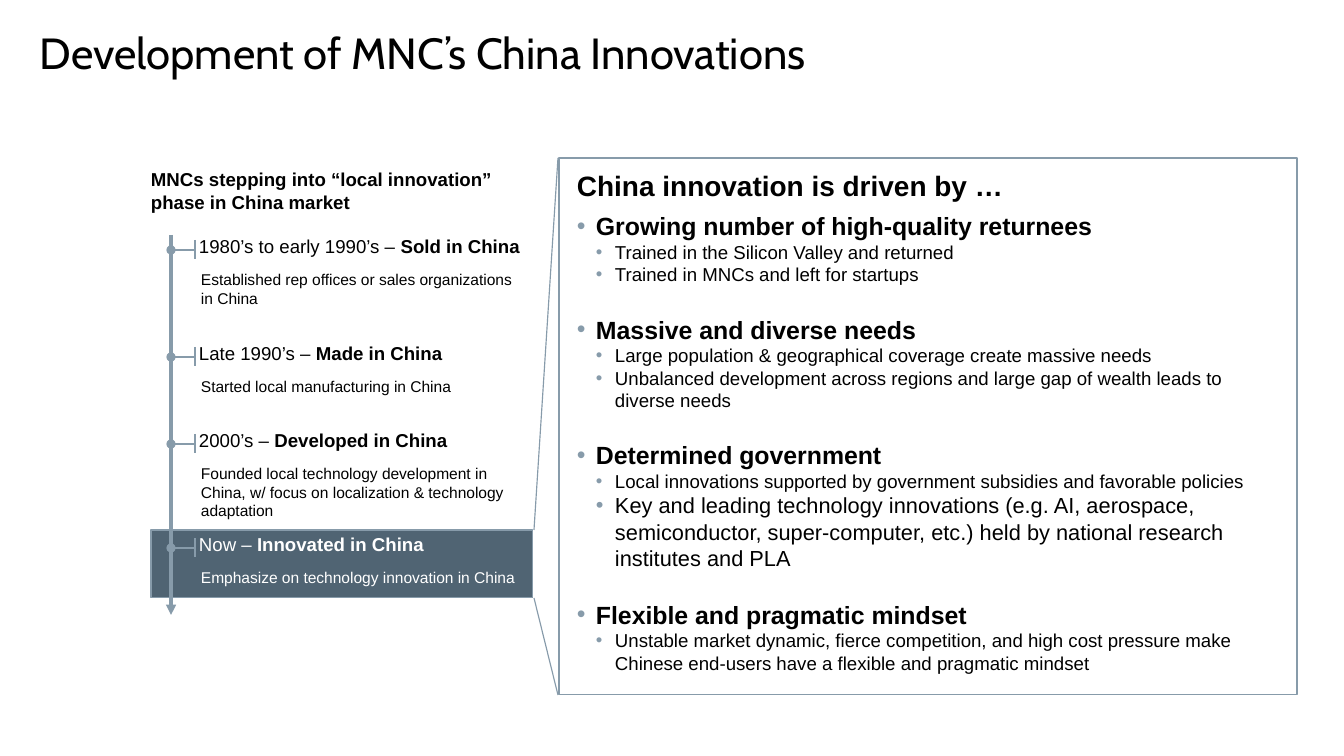
from lxml import etree
from pptx import Presentation
from pptx.dml.color import RGBColor
from pptx.enum import shapes, text
from pptx.oxml import ns
from pptx.util import Pt

BLACK = RGBColor(0x00, 0x00, 0x00)
WHITE = RGBColor(0xFF, 0xFF, 0xFF)
SLATE = RGBColor(0x50, 0x64, 0x73)
STEEL = RGBColor(0x87, 0x9B, 0xAA)

STAGES = [
    (0, "1980’s to early 1990’s – ", "Sold in China",
     "Established rep offices or sales organizations in China"),
    (107, "Late 1990’s – ", "Made in China",
     "Started local manufacturing in China"),
    (194, "2000’s – ", "Developed in China",
     "Founded local technology development in China, "
     "w/ focus on localization & technology adaptation"),
    (298, "Now – ", "Innovated in China",
     "Emphasize on technology innovation in China"),
]
DRIVERS = [
    ("Growing number of high-quality returnees", [
        ("Trained in the Silicon Valley and returned", 12),
        ("Trained in MNCs and left for startups", 12)]),
    ("Massive and diverse needs", [
        ("Large population & geographical coverage create massive needs", 12),
        ("Unbalanced development across regions and large gap of wealth "
         "leads to diverse needs", 12)]),
    ("Determined government", [
        ("Local innovations supported by government subsidies "
         "and favorable policies", 12),
        ("Key and leading technology innovations (e.g. AI, aerospace, "
         "semiconductor, super-computer, etc.) held by national research "
         "institutes and PLA", 14)]),
    ("Flexible and pragmatic mindset", [
        ("Unstable market dynamic, fierce competition, and high cost pressure "
         "make Chinese end-users have a flexible and pragmatic mindset", 12)]),
]


def px(*nums):
    """Turn px lengths into EMU."""
    return [round(n * 914400 / 112) for n in nums]


def style(para, size, color=BLACK, bold=False, name="Arial"):
    """Set the font of a whole paragraph."""
    font = para.font
    font.name, font.size, font.bold = name, Pt(size), bold
    font.color.rgb = color


def bullet(para, level):
    """Give a paragraph a hanging steel bullet."""
    props = para._p.get_or_add_pPr()
    step = px(19)[0]
    props.set("marL", str(step * level))
    props.set("indent", str(-step))
    tint = etree.SubElement(props, ns.qn("a:buClr"))
    etree.SubElement(tint, ns.qn("a:srgbClr")).set("val", str(STEEL))
    etree.SubElement(props, ns.qn("a:buFont")).set("typeface", "Arial")
    etree.SubElement(props, ns.qn("a:buChar")).set("char", "•")


def label(slide, box):
    """Add a wrapping text box without margins and return its frame."""
    frame = slide.shapes.add_textbox(*px(*box)).text_frame
    frame.word_wrap = True
    frame.margin_left = frame.margin_right = 0
    frame.margin_top = frame.margin_bottom = 0
    return frame


def rule(slide, ends, width=0.75, head=None, tail=None):
    """Draw a steel line with optional end marks."""
    line = slide.shapes.add_connector(shapes.MSO_CONNECTOR.STRAIGHT, *px(*ends))
    line.line.color.rgb = STEEL
    line.line.width = Pt(width)
    etree.SubElement(line._element.spPr, ns.qn("a:effectLst"))
    stroke = line.line._get_or_add_ln()
    for tag, mark in (("a:headEnd", head), ("a:tailEnd", tail)):
        if mark:
            etree.SubElement(stroke, ns.qn(tag)).set("type", mark)


def frame_box(slide, box, fill=None):
    """Draw a rectangle with a thin steel outline."""
    rect = slide.shapes.add_shape(shapes.MSO_SHAPE.RECTANGLE, *px(*box))
    rect.shadow.inherit = False
    if fill is None:
        rect.fill.background()
    else:
        rect.fill.solid()
        rect.fill.fore_color.rgb = fill
    rect.line.color.rgb = STEEL
    rect.line.width = Pt(0.75)


def heading(slide, box):
    """Place and format the slide title."""
    title = slide.shapes.title
    title.left, title.top, title.width, title.height = px(*box)
    frame = title.text_frame
    frame.text = "Development of MNC’s China Innovations"
    frame.margin_left = frame.margin_right = 0
    frame.margin_top, frame.margin_bottom = px(1, 0)
    frame.vertical_anchor = text.MSO_ANCHOR.TOP
    frame.auto_size = text.MSO_AUTO_SIZE.NONE
    para = frame.paragraphs[0]
    para.alignment = text.PP_ALIGN.LEFT
    para.line_spacing = Pt(30)
    style(para, 28, name="Cabin")


def stage(slide, left, top, when, what, detail, color):
    """Add one timeline stage with its marker and texts."""
    rule(slide, (left, top + 15, left + 24, top + 15), head="oval")
    rule(slide, (left + 24, top + 5, left + 24, top + 24))
    para = label(slide, (left + 28, top, 354, 22)).paragraphs[0]
    para.add_run().text = when
    run = para.add_run()
    run.text = what
    style(para, 12, color)
    run.font.bold = True
    frame = label(slide, (left + 30, top + 35, 320, 19))
    frame.text = detail
    style(frame.paragraphs[0], 10, color)


def timeline(slide, box):
    """Build the headed timeline whose last stage is highlighted."""
    left, top, width, height = box
    frame_box(slide, (left, top + 362, width, 68), SLATE)
    frame = label(slide, (left, top, width + 12, 45))
    frame.text = "MNCs stepping into “local innovation” phase in China market"
    style(frame.paragraphs[0], 12, bold=True)
    axis, start = left + 20, top + 67
    rule(slide, (axis, start, axis, top + height), 2.25, tail="triangle")
    for drop, when, what, detail in STAGES:
        color = WHITE if drop == STAGES[-1][0] else BLACK
        stage(slide, axis, start + drop, when, what, detail, color)


def panel(slide, box):
    """Build the framed list of innovation drivers."""
    left, top, width, height = box
    frame = label(slide, (left + 18, top + 10, width - 34, height - 26))
    para = frame.paragraphs[0]
    para.text = "China innovation is driven by …"
    para.space_after = Pt(6)
    style(para, 18, bold=True)
    for index, (driver, points) in enumerate(DRIVERS):
        rows = [(driver, 16, 1)] + [(point, size, 2) for point, size in points]
        for words, size, level in rows:
            para = frame.add_paragraph()
            para.text = words
            bullet(para, level)
            if index and level == 1:
                para.space_before = Pt(18.4)
            style(para, size, bold=level == 1)
    frame_box(slide, box)


def main():
    """Build and save the slide."""
    deck = Presentation()
    deck.slide_width, deck.slide_height = px(1344, 756)
    slide = deck.slides.add_slide(deck.slide_layouts[5])
    heading(slide, (40, 31, 1100, 95))
    timeline(slide, (151, 168, 382, 447))
    rule(slide, (534, 530, 558, 158))
    rule(slide, (534, 598, 558, 695))
    panel(slide, (559, 158, 738, 537))
    deck.save("out.pptx")


if __name__ == "__main__":
    main()
